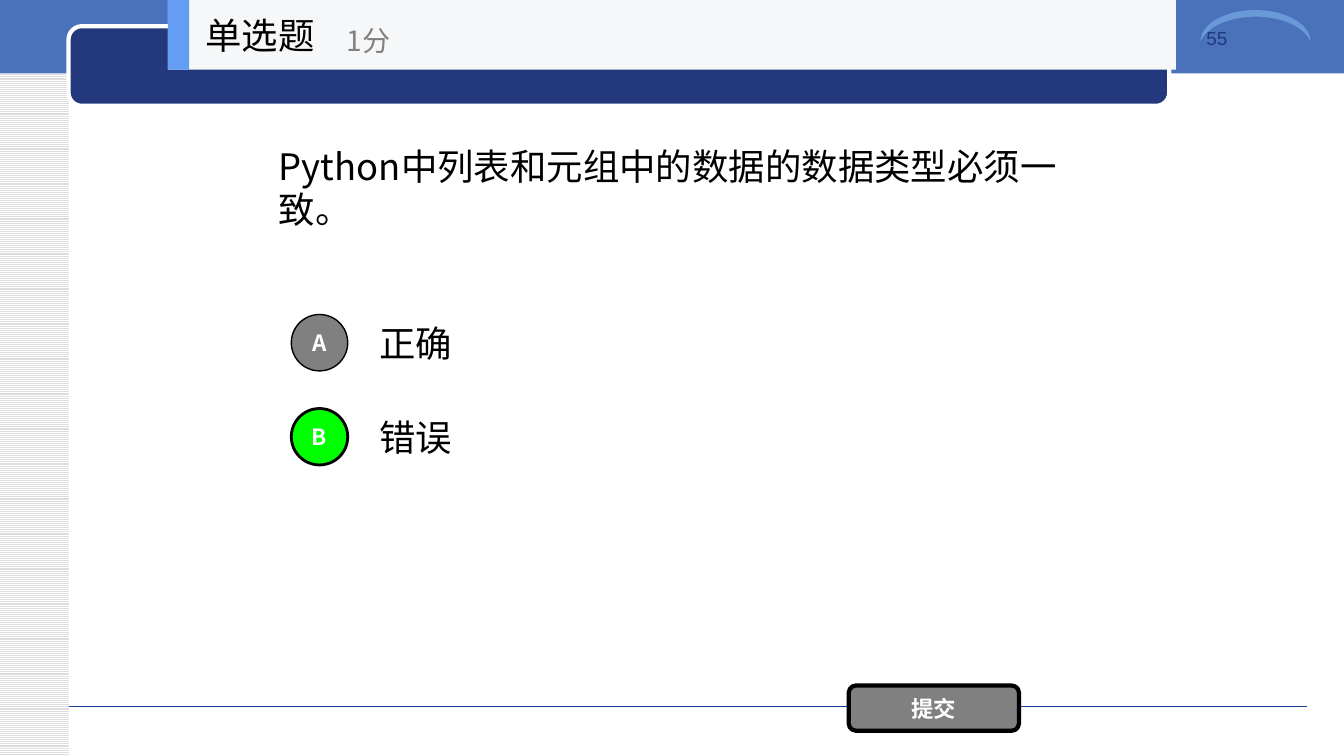
from pptx import Presentation
from pptx import util as u
from pptx.dml.color import RGBColor
from pptx.enum import dml, shapes, text
from pptx.oxml.ns import qn
from lxml import etree

WHITE = RGBColor(0xFF, 0xFF, 0xFF)
BLACK = RGBColor(0x00, 0x00, 0x00)
GRAY = RGBColor(0x80, 0x80, 0x80)
STRIPE = RGBColor(0xDD, 0xDD, 0xDD)
PALE = RGBColor(0xF6, 0xF7, 0xF8)
BLUE = RGBColor(0x49, 0x72, 0xBB)
NAVY = RGBColor(0x23, 0x38, 0x7D)
RULE = RGBColor(0x1A, 0x3D, 0x97)
SKY = RGBColor(0x6A, 0x99, 0xD8)
ACCENT = RGBColor(0x63, 0x9E, 0xF4)
GREEN = RGBColor(0x00, 0xFF, 0x00)

COLS, ROWS = 160, 90
KIND = shapes.MSO_SHAPE


class Page:
    """Style and current slide; lengths are columns and rows of the grid."""

    font = "Noto Sans CJK SC"

    def __init__(self, deck):
        self.slide = deck.slides.add_slide(deck.slide_layouts[6])
        self.col = deck.slide_width / COLS
        self.row = deck.slide_height / ROWS

    def place(self, x, y, w, h):
        return (round(x * self.col), round(y * self.row),
                round(w * self.col), round(h * self.row))

    def shape(self, kind, box, fill, line=None, width=1):
        item = self.slide.shapes.add_shape(kind, *self.place(*box))
        item.shadow.inherit = False
        item.fill.solid()
        item.fill.fore_color.rgb = fill
        if line is None:
            item.line.fill.background()
        else:
            item.line.color.rgb = line
            item.line.width = u.Pt(width)
        return item

    def say(self, item, words, size, color=BLACK, font=None, bold=False,
            align=text.PP_ALIGN.LEFT, anchor=text.MSO_ANCHOR.MIDDLE):
        frame = item.text_frame
        frame.word_wrap = True
        frame.vertical_anchor = anchor
        para = frame.paragraphs[0]
        para.alignment = align
        run = para.add_run()
        run.text = words
        run.font.name = font or self.font
        run.font.size = u.Pt(size)
        run.font.bold = bold
        run.font.color.rgb = color
        # East Asian typeface follows the Latin one
        east = etree.SubElement(run._r.get_or_add_rPr(), qn("a:ea"))
        east.set("typeface", font or self.font)

    def label(self, box, words, size, **style):
        item = self.slide.shapes.add_textbox(*self.place(*box))
        self.say(item, words, size, **style)

    def button(self, kind, box, words, fill, width):
        item = self.shape(kind, box, fill, BLACK, width)
        frame = item.text_frame
        frame.margin_left = frame.margin_right = 0
        frame.margin_top = frame.margin_bottom = 0
        self.say(item, words, 16, color=WHITE, bold=True,
                 align=text.PP_ALIGN.CENTER)

    def rule(self, x, y, end, color, width):
        left, top, right, low = self.place(x, y, end, y)
        item = self.slide.shapes.add_connector(
            shapes.MSO_CONNECTOR.STRAIGHT, left, top, right, low)
        item.line.color.rgb = color
        item.line.width = u.Pt(width)
        etree.SubElement(item._element.spPr, qn("a:effectLst"))


def main():
    deck = Presentation()
    deck.slide_width, deck.slide_height = u.Inches(13.33), u.Inches(7.5)
    page = Page(deck)
    edge = 8.16

    # Backdrop: striped margin, top band, footer rule, title bar, arc
    strip = page.shape(KIND.RECTANGLE, (0, 0, edge, ROWS), WHITE)
    strip.fill.patterned()
    strip.fill.pattern = dml.MSO_PATTERN.LIGHT_HORIZONTAL
    strip.fill.fore_color.rgb = STRIPE
    strip.fill.back_color.rgb = WHITE
    page.shape(KIND.RECTANGLE, (0, 0, COLS, 8.76), BLUE)
    page.rule(edge, 84.12, 155.64, RULE, 0.5)
    page.shape(KIND.ROUNDED_RECTANGLE, (edge, 3.12, 131.04, 9.48),
               NAVY, WHITE, 3)
    arc = page.shape(KIND.MOON, (147.6, -3.48, 3.72, 13.08), SKY)
    arc.adjustments[0] = 0.21
    arc.rotation = 90
    page.label((142.44, 2.52, 14.52, 8.52), "55", 13.5, color=NAVY,
               font="Arial", anchor=text.MSO_ANCHOR.TOP)

    # Question
    page.label((32, 8.28, 96, 28.08),
               "Python中列表和元组中的数据的数据类型必须一致。", 26)

    # Answers
    answers = [("A", "正确", GRAY, 1), ("B", "错误", GREEN, 2)]
    for i, (mark, words, fill, width) in enumerate(answers):
        top = 36.6 + 11.2 * i
        page.label((44, top, 84, 8.4), words, 26)
        page.button(KIND.OVAL, (34.68, top + 0.84, 6.72, 6.72),
                    mark, fill, width)

    # Submit button
    page.button(KIND.ROUNDED_RECTANGLE, (101.04, 81.6, 20.28, 5.4),
                "提交", GRAY, 3)

    # Header
    high = 8.28
    page.shape(KIND.RECTANGLE, (20, 0, 120, high), PALE)
    page.shape(KIND.RECTANGLE, (20, 0, 2.52, high), ACCENT)
    page.label((23.28, 0, 24.96, high), "单选题", 26)
    page.label((40.08, 1.44, 30, 6.72), "1分", 20, color=GRAY)

    deck.save("out.pptx")


if __name__ == "__main__":
    main()
